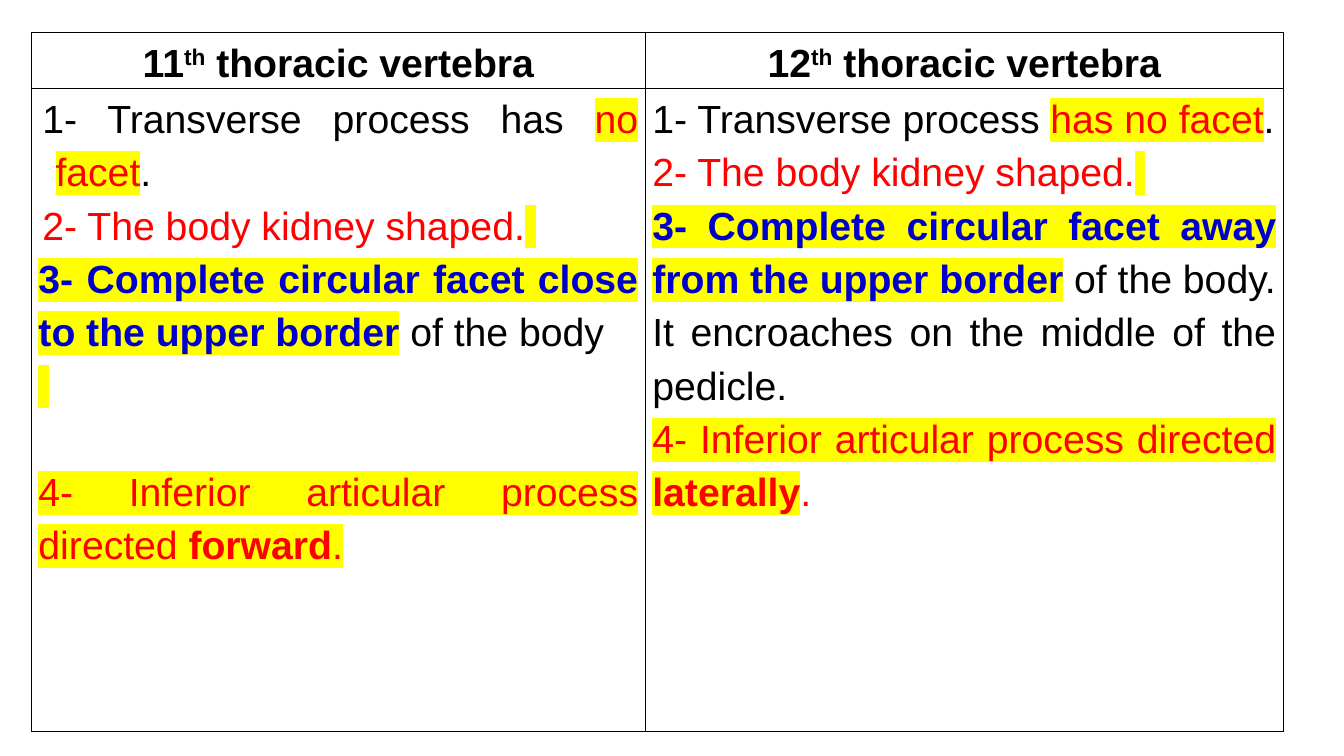
from lxml.etree import SubElement
from pptx import Presentation
from pptx.dml.color import RGBColor
from pptx.enum.text import PP_ALIGN
from pptx.oxml import parse_xml
from pptx.util import Cm, Pt

NS = "http://schemas.openxmlformats.org/drawingml/2006/main"
COLORS = {"black": "000000", "red": "FF0000", "blue": "0000CC", "yellow": "FFFF00"}

# Run styles: colour, bold, highlighted, superscript
STYLES = {
    "head": ("black", True, False, False),
    "super": ("black", True, False, True),
    "plain": ("black", False, False, False),
    "red": ("red", False, False, False),
    "red mark": ("red", False, True, False),
    "red bold mark": ("red", True, True, False),
    "blue mark": ("blue", True, True, False),
}
HANGING = {"marL": Cm(0.43), "indent": Cm(-0.33)}
FLUSH = {"marL": 0, "indent": 0}
BLANK_LINE = 38

kidney_body = [("2- The body kidney shaped.", "red"), (" ", "red mark")]
inferior_process = ("4- Inferior articular process directed ", "red mark")

# Each paragraph: indents, space before in points, runs
eleventh = [
    (HANGING, 0, [("1- Transverse process has ", "plain"), ("no facet", "red mark"), (".", "plain")]),
    (HANGING, 0, kidney_body),
    (FLUSH, 0, [("3- Complete circular facet close to the upper border", "blue mark"),
                (" of the body", "plain")]),
    (FLUSH, 0, [(" ", "red mark")]),
    (FLUSH, BLANK_LINE, [inferior_process, ("forward", "red bold mark"), (".", "red mark")]),
]
twelfth = [
    (FLUSH, 0, [("1- Transverse process ", "plain"), ("has no facet", "red mark"), (".", "plain")]),
    (FLUSH, 0, kidney_body),
    (FLUSH, 0, [("3- Complete circular facet away from the upper border", "blue mark"),
                (" of the body.", "plain")]),
    (FLUSH, 0, [("It encroaches on the middle of the pedicle.", "plain")]),
    (FLUSH, 0, [inferior_process, ("laterally", "red bold mark"), (".", "red")]),
]
headings = [
    [(FLUSH, 0, [(number, "head"), ("th", "super"), (" thoracic vertebra", "head")])]
    for number in ("11", "12")
]


def add_run(paragraph, text, style):
    color, bold, highlighted, superscript = STYLES[style]
    run = paragraph.add_run()
    run.text = text
    for name, value in {"name": "Arial", "size": Pt(28), "bold": bold}.items():
        setattr(run.font, name, value)
    run.font.color.rgb = RGBColor.from_string(COLORS[color])
    properties = run.font._element
    if superscript:
        properties.set("baseline", "30000")
    if highlighted:
        properties.find(f"{{{NS}}}solidFill").addnext(parse_xml(
            f'<a:highlight xmlns:a="{NS}"><a:srgbClr val="{COLORS["yellow"]}"/></a:highlight>'))


def fill_cell(cell, paragraphs, alignment):
    margins = {"margin_left": Cm(0.18), "margin_right": Cm(0.18), "margin_top": 0, "margin_bottom": 0}
    for name, value in margins.items():
        setattr(cell, name, value)
    for index, (indents, space_before, runs) in enumerate(paragraphs):
        frame = cell.text_frame
        paragraph = frame.add_paragraph() if index else frame.paragraphs[0]
        layout = {"alignment": alignment, "line_spacing": 1.22, "space_before": Pt(space_before)}
        for name, value in layout.items():
            setattr(paragraph, name, value)
        for name, value in indents.items():
            paragraph._p.get_or_add_pPr().set(name, str(int(value)))
        for text, style in runs:
            add_run(paragraph, text, style)
    cell_properties = cell._tc.get_or_add_tcPr()
    for side in ("lnL", "lnR", "lnT", "lnB"):
        border = SubElement(cell_properties, f"{{{NS}}}{side}", w=str(Pt(1)))
        solid = SubElement(border, f"{{{NS}}}solidFill")
        SubElement(solid, f"{{{NS}}}srgbClr", val=COLORS["black"])
    cell.fill.background()


prs = Presentation()
prs.slide_width, prs.slide_height = Cm(33.87), Cm(19.05)
slide = prs.slides.add_slide(prs.slide_layouts[6])

vertebrae = slide.shapes.add_table(2, 2, Cm(0.79), Cm(0.81), Cm(31.55), Cm(17.63)).table
vertebrae.first_row = vertebrae.horz_banding = False
for column, width in zip(vertebrae.columns, (15.47, 16.08)):
    column.width = Cm(width)
for row, height in zip(vertebrae.rows, (1.42, 16.21)):
    row.height = Cm(height)

rows = [(headings, PP_ALIGN.CENTER), ([eleventh, twelfth], PP_ALIGN.JUSTIFY)]
for row, (contents, alignment) in enumerate(rows):
    for column, paragraphs in enumerate(contents):
        fill_cell(vertebrae.cell(row, column), paragraphs, alignment)

prs.save("out.pptx")
